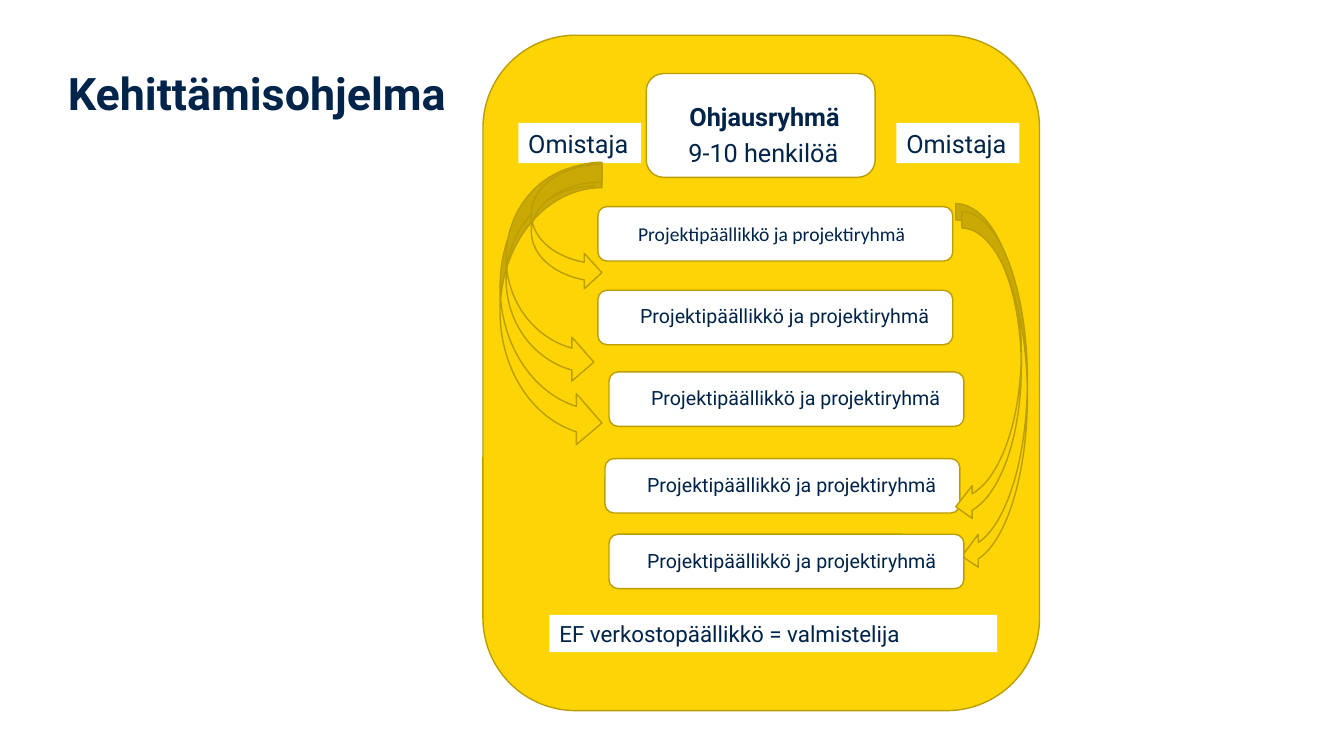
from pptx import Presentation
from pptx.dml.color import RGBColor
from pptx.enum.shapes import MSO_SHAPE
from pptx.enum.text import MSO_ANCHOR, MSO_AUTO_SIZE, PP_ALIGN
from pptx.util import Inches, Pt

WHITE = "FEFFFE"
YELLOW = "FDD405"
OUTLINE = "BB9D04"
INK = "002349"
TITLE_INK = "00244A"

PROJECT_TEXT = "Projektipäällikkö ja projektiryhmä"
PROJECT_SIZE = (3.52, 0.54)
# Project box left and top, label offset and width, font
PROJECTS = [
    (5.93, 2.05, 0.3, 0.1, 2.88, "Calibri"),
    (5.93, 2.88, 0.32, 0.09, 3.23, "Roboto"),
    (6.04, 3.69, 0.32, 0.09, 3.23, "Roboto"),
    (6.0, 4.55, 0.32, 0.09, 3.23, "Roboto"),
    (6.04, 5.3, 0.28, 0.1, 3.23, "Roboto"),
]
LEFT_ARROWS = [(4.96, 1.61, 1.01, 2.84), (5.02, 1.63, 0.87, 2.18), (5.27, 1.63, 0.7, 1.25)]
RIGHT_ARROWS = [(9.48, 2.02, 0.65, 3.17), (9.54, 2.1, 0.65, 3.58)]


def colour(hex_code):
    return RGBColor.from_string(hex_code)


def inches(box):
    return [Inches(length) for length in box]


def add_outlined(slide, preset, box, fill):
    outlined = slide.shapes.add_shape(preset, *inches(box))
    outlined.shadow.inherit = False
    outlined.fill.solid()
    outlined.fill.fore_color.rgb = colour(fill)
    outlined.line.color.rgb = colour(OUTLINE)
    outlined.line.width = Pt(1)
    return outlined


def add_label(slide, box, text, size, font="Roboto", bold=False, fill=None, wrap=False):
    label = slide.shapes.add_textbox(*inches(box))
    if fill:
        label.fill.solid()
        label.fill.fore_color.rgb = colour(fill)
    frame = label.text_frame
    frame.text = text
    frame.word_wrap = wrap
    frame.auto_size = MSO_AUTO_SIZE.SHAPE_TO_FIT_TEXT
    style_run(frame.paragraphs[0].runs[0], size, font, INK, bold)


def style_run(run, size, font, ink, bold):
    run.font.size = Pt(size)
    run.font.name = font
    run.font.bold = bold
    run.font.color.rgb = colour(ink)


def add_title(slide, box):
    title = slide.shapes.title
    title.left, title.top, title.width, title.height = inches(box)
    frame = title.text_frame
    frame.text = "Kehittämisohjelma"
    frame.word_wrap = True
    frame.vertical_anchor = MSO_ANCHOR.MIDDLE
    heading = frame.paragraphs[0]
    heading.alignment = PP_ALIGN.CENTER
    heading.line_spacing = 0.9
    style_run(heading.runs[0], 32, "Roboto", TITLE_INK, True)


def add_steering_group(slide, box):
    left, top = box[:2]
    add_outlined(slide, MSO_SHAPE.ROUNDED_RECTANGLE, box, WHITE)
    add_label(slide, (left + 0.33, top + 0.23, 1.73, 0.4), "Ohjausryhmä", 18, bold=True)
    add_label(slide, (left + 0.32, top + 0.58, 1.74, 0.4), "9-10 henkilöä", 18)


def add_project(slide, left, top, dx, dy, label_width, font):
    add_outlined(slide, MSO_SHAPE.ROUNDED_RECTANGLE, (left, top, *PROJECT_SIZE), WHITE)
    add_label(slide, (left + dx, top + dy, label_width, 0.34), PROJECT_TEXT, 14, font)


def add_arrow(slide, box, mirrored=False):
    arrow = add_outlined(slide, MSO_SHAPE.CURVED_RIGHT_ARROW, box, YELLOW)
    if mirrored:
        arrow.element.spPr.get_or_add_xfrm().set("flipH", "1")


def main():
    prs = Presentation()
    prs.slide_width, prs.slide_height = Inches(13.33), Inches(7.5)
    slide = prs.slides.add_slide(prs.slide_layouts[5])
    slide.background.fill.solid()
    slide.background.fill.fore_color.rgb = colour(WHITE)

    # Title and programme panel
    add_title(slide, (0.23, 0.38, 4.64, 1.15))
    add_outlined(slide, MSO_SHAPE.ROUNDED_RECTANGLE, (4.79, 0.35, 5.52, 6.7), YELLOW)

    # Steering group between its two owners
    add_steering_group(slide, (6.41, 0.73, 2.27, 1.03))
    for owner_left in (5.14, 8.89):
        add_label(slide, (owner_left, 1.22, 1.22, 0.4), "Omistaja", 18, fill=WHITE)

    # Projects and the owners' arrows; the last project lies over its arrow tip
    for project in PROJECTS[:-1]:
        add_project(slide, *project)
    for box in LEFT_ARROWS:
        add_arrow(slide, box)
    for box in RIGHT_ARROWS:
        add_arrow(slide, box, mirrored=True)
    add_project(slide, *PROJECTS[-1])

    # Preparer
    add_label(slide, (5.45, 6.1, 4.44, 0.37), "EF verkostopäällikkö = valmistelija", 16,
              fill=WHITE, wrap=True)

    prs.save("out.pptx")


if __name__ == "__main__":
    main()
